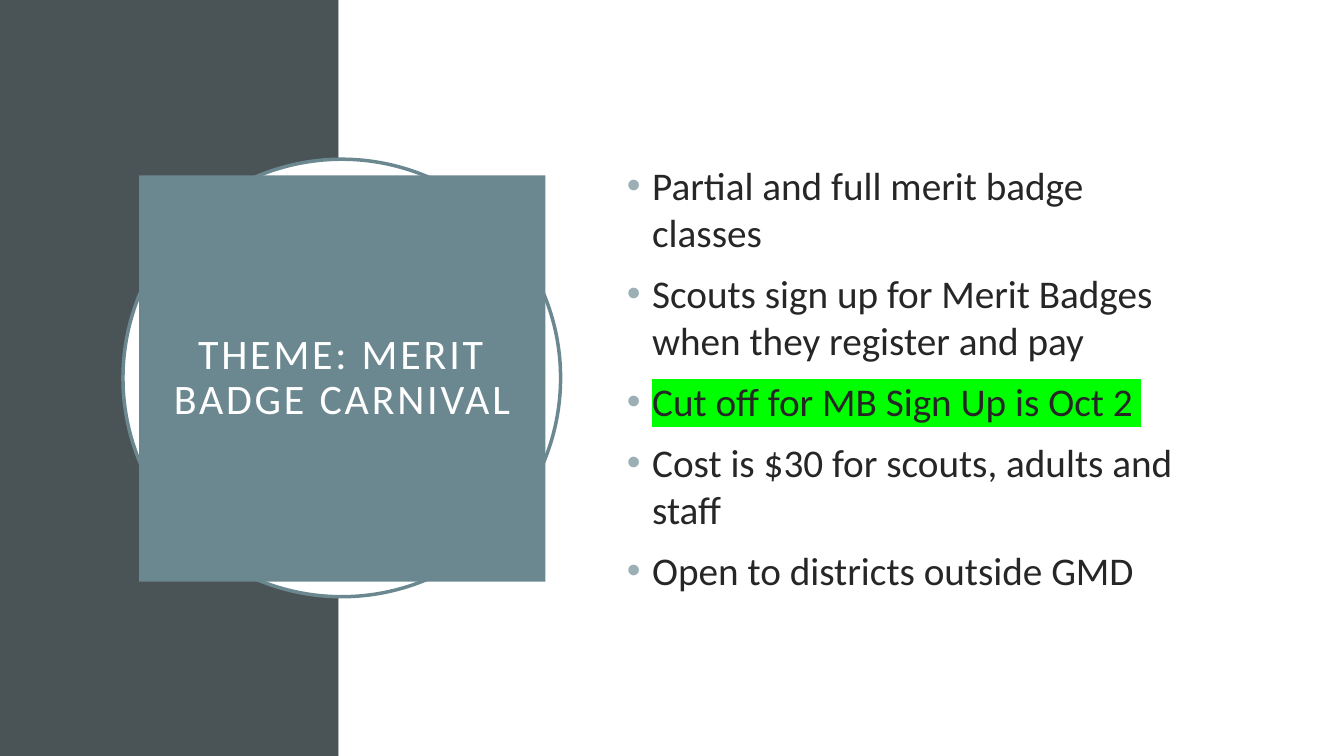
from dataclasses import dataclass

from lxml.etree import SubElement
from pptx import Presentation
from pptx.dml.color import RGBColor
from pptx.enum.shapes import MSO_SHAPE as Shape
from pptx.enum.text import MSO_ANCHOR as Anchor, PP_ALIGN as Align
from pptx.oxml import parse_xml
from pptx.oxml.ns import nsdecls, qn
from pptx.util import Emu, Pt

EMU_PER_PX = 9144  # 100 px to the inch
WIDTH, HEIGHT = 1333, 750


@dataclass(frozen=True)
class Theme:
    font: str = "Calibri"
    title_size: int = 30
    body_size: int = 28
    dark: str = "4A5356"
    accent: str = "6B8891"
    bullet: str = "9BAFB5"
    ink: str = "262626"
    white: str = "FFFFFF"
    highlight: str = "00FF00"


THEME = Theme()

TITLE = "THEME: MERIT BADGE CARNIVAL"
CUT_OFF = "Cut off for MB Sign Up is Oct 2 "
BULLETS = [
    "Partial and full merit badge classes",
    "Scouts sign up for Merit Badges when they register and pay",
    CUT_OFF,
    "Cost is $30 for scouts, adults and staff",
    "Open to districts outside GMD",
]


def px(n):
    return Emu(n * EMU_PER_PX)


def color(value):
    return RGBColor.from_string(value)


def add_shape(s, kind, x, y, w, h, fill, line=None):
    sp = s.shapes.add_shape(kind, px(x), px(y), px(w), px(h))
    sp.shadow.inherit = False
    sp.fill.solid()
    sp.fill.fore_color.rgb = color(fill)
    if line:
        sp.line.color.rgb = color(line)
        sp.line.width = Pt(2.5)
    else:
        sp.line.fill.background()
    return sp


def style_run(r, size, rgb):
    r.font.name = THEME.font
    r.font.size = Pt(size)
    r.font.color.rgb = color(rgb)


def add_title(sp, text):
    tf = sp.text_frame
    tf.text = text
    tf.word_wrap = True
    tf.vertical_anchor = Anchor.MIDDLE
    tf.margin_left = tf.margin_right = px(20)
    tf.margin_top = tf.margin_bottom = px(20)
    p = tf.paragraphs[0]
    p.alignment = Align.CENTER
    p.line_spacing = 0.9
    r = p.runs[0]
    style_run(r, THEME.title_size, THEME.white)
    r.font._element.set("spc", "200")


def add_bullet(p):
    pPr = p._p.get_or_add_pPr()
    pPr.set("marL", str(px(25)))
    pPr.set("indent", str(-px(25)))
    bu_clr = SubElement(pPr, qn("a:buClr"))
    SubElement(bu_clr, qn("a:srgbClr"), val=THEME.bullet)
    SubElement(pPr, qn("a:buFont"), typeface="Arial")
    SubElement(pPr, qn("a:buChar"), char="•")


def highlight_run(r):
    fill = r.font._element.find(qn("a:solidFill"))
    fill.addnext(parse_xml(
        f'<a:highlight {nsdecls("a")}><a:srgbClr val="{THEME.highlight}"/></a:highlight>'))


def add_bullets(s, x, y, w, h, items):
    tf = s.shapes.add_textbox(px(x), px(y), px(w), px(h)).text_frame
    tf.word_wrap = True
    tf.vertical_anchor = Anchor.MIDDLE
    tf.text = "\n".join(items)
    for p, item in zip(tf.paragraphs, items):
        p.space_before = Pt(10)
        add_bullet(p)
        r = p.runs[0]
        style_run(r, THEME.body_size, THEME.ink)
        if item == CUT_OFF:
            highlight_run(r)


def main():
    prs = Presentation()
    prs.slide_width, prs.slide_height = px(WIDTH), px(HEIGHT)
    s = prs.slides.add_slide(prs.slide_layouts[6])

    # Background panels
    split = 336
    add_shape(s, Shape.RECTANGLE, 0, 0, split, HEIGHT, THEME.dark)
    add_shape(s, Shape.RECTANGLE, split, 0, WIDTH - split, HEIGHT, THEME.white)

    # Title square over its ring
    add_shape(s, Shape.OVAL, 122, 158, 434, 434, THEME.white, THEME.accent)
    square = add_shape(s, Shape.RECTANGLE, 138, 174, 403, 403, THEME.accent)
    add_title(square, TITLE)

    # Event details
    add_bullets(s, 612, 153, 582, 443, BULLETS)

    prs.save("out.pptx")


if __name__ == "__main__":
    main()
